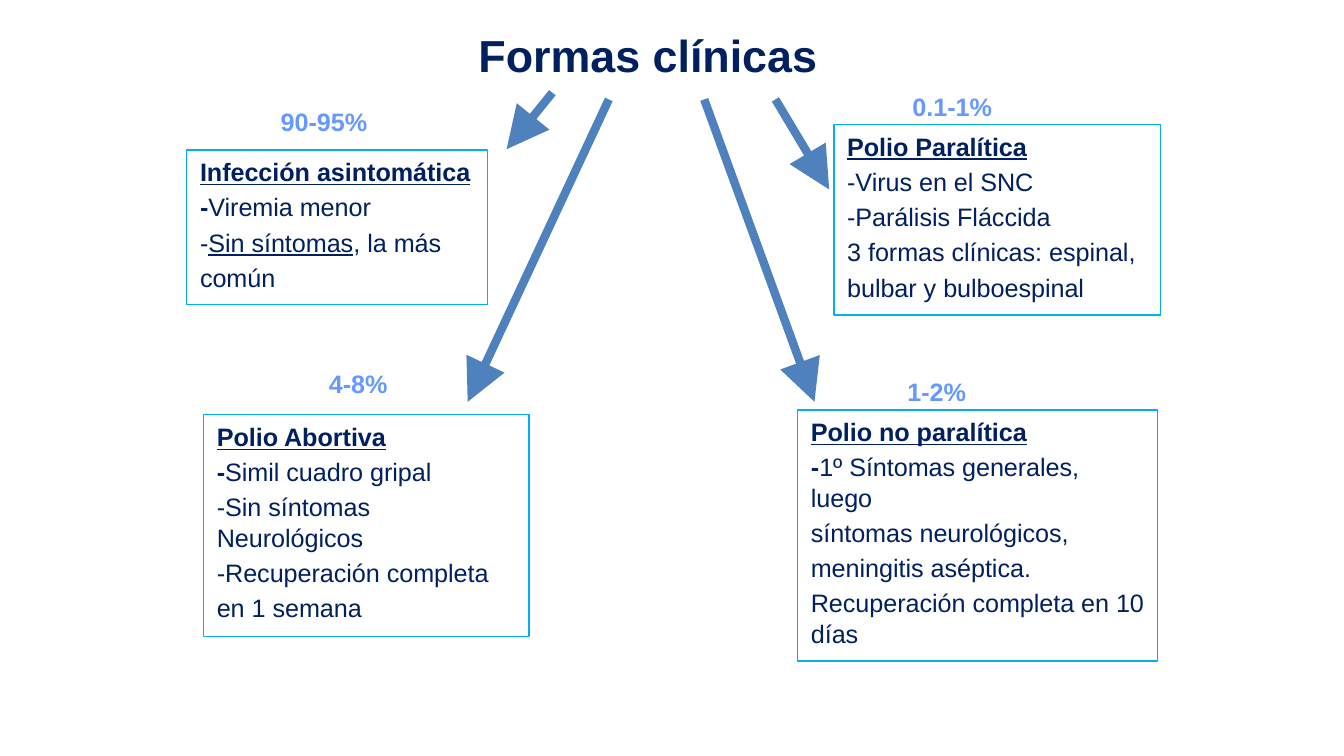
from pptx import Presentation
from pptx.dml.color import RGBColor
from pptx.enum import shapes, text
from pptx.oxml import ns
from pptx.util import Pt
from lxml import etree

PX = 4572  # EMU per px, 200 px to the inch
NAVY = RGBColor(0x00, 0x20, 0x60)
SKY = RGBColor(0x00, 0xB0, 0xF0)
PERIWINKLE = RGBColor(0x66, 0x99, 0xFF)
STEEL = RGBColor(0x4F, 0x81, 0xBD)


def emu(lengths):
    return [v * PX for v in lengths]


class Deck:
    font = "Arial"
    body_size = 13.5
    title_size = 24

    def __init__(self, width, height):
        self.prs = Presentation()
        self.prs.slide_width, self.prs.slide_height = emu((width, height))
        self.s = self.prs.slides.add_slide(self.prs.slide_layouts[6])

    def style(self, item, size, color, bold):
        """Set the font of a paragraph or a run."""
        item.font.name, item.font.size = self.font, Pt(size)
        item.font.color.rgb, item.font.bold = color, bold

    def label(self, area, words, size=body_size, color=PERIWINKLE):
        """Bold centred line of text."""
        sp = self.s.shapes.add_textbox(*emu(area))
        tf = sp.text_frame
        tf.word_wrap = False
        tf.auto_size = text.MSO_AUTO_SIZE.SHAPE_TO_FIT_TEXT
        p = tf.paragraphs[0]
        p.text = words
        p.alignment = text.PP_ALIGN.CENTER
        self.style(p, size, color, True)

    def box(self, area, heading, lines):
        """Outlined box; a line is a string or a list of (words, mark)."""
        sp = self.s.shapes.add_shape(shapes.MSO_SHAPE.RECTANGLE, *emu(area))
        sp.shadow.inherit = False
        sp.fill.background()
        sp.line.color.rgb, sp.line.width = SKY, Pt(0.75)
        tf = sp.text_frame
        tf.word_wrap = True
        tf.auto_size = text.MSO_AUTO_SIZE.SHAPE_TO_FIT_TEXT
        tf.vertical_anchor = text.MSO_ANCHOR.TOP
        for i, line in enumerate([[(heading, "bu")], *lines]):
            p = tf.add_paragraph() if i else tf.paragraphs[0]
            p.alignment = text.PP_ALIGN.LEFT
            p.space_before = Pt(0.2 * self.body_size if i else 0)
            for words, mark in [(line, "")] if isinstance(line, str) else line:
                r = p.add_run()
                r.text = words
                self.style(r, self.body_size, NAVY, "b" in mark)
                r.font.underline = "u" in mark

    def arrow(self, *ends):
        c = self.s.shapes.add_connector(shapes.MSO_CONNECTOR.STRAIGHT, *emu(ends))
        c.line.color.rgb, c.line.width = STEEL, Pt(4.5)
        ln = c._element.spPr.find(ns.qn("a:ln"))
        etree.SubElement(ln, ns.qn("a:tailEnd"), type="triangle", w="lg", len="lg")
        etree.SubElement(c._element.spPr, ns.qn("a:effectLst"))


def main():
    deck = Deck(2000, 1125)

    # Title
    deck.label((362, 31, 1204, 100), "Formas clínicas", Deck.title_size, NAVY)

    # Clinical forms
    deck.box((278, 223, 448, 230), "Infección asintomática", [
        [("-", "b"), ("Viremia menor", "")],
        [("-", ""), ("Sin síntomas", "u"), (", la más", "")],
        "común"])
    deck.box((1241, 185, 486, 284), "Polio Paralítica", [
        "-Virus en el SNC",
        "-Parálisis Fláccida",
        "3 formas clínicas: espinal,",
        "bulbar y bulboespinal"])
    deck.box((1187, 610, 536, 374), "Polio no paralítica", [
        [("-", "b"), ("1º Síntomas generales, luego", "")],
        "síntomas neurológicos,",
        "meningitis aséptica.",
        "Recuperación completa en 10 días"])
    deck.box((303, 617, 484, 330), "Polio Abortiva", [
        [("-", "b"), ("Simil cuadro gripal", "")],
        "-Sin síntomas Neurológicos",
        "-Recuperación completa",
        "en 1 semana"])

    # Arrows from the title to each form
    deck.arrow(822, 138, 754, 222)
    deck.arrow(906, 148, 696, 598)
    deck.arrow(1048, 148, 1212, 598)
    deck.arrow(1154, 148, 1234, 282)

    # Share of cases
    deck.label((397, 148, 170, 66), "90-95%")
    deck.label((469, 538, 128, 66), "4-8%")
    deck.label((1326, 550, 136, 66), "1-2%")
    deck.label((1337, 126, 160, 66), "0.1-1%")

    deck.prs.save("out.pptx")


if __name__ == "__main__":
    main()
